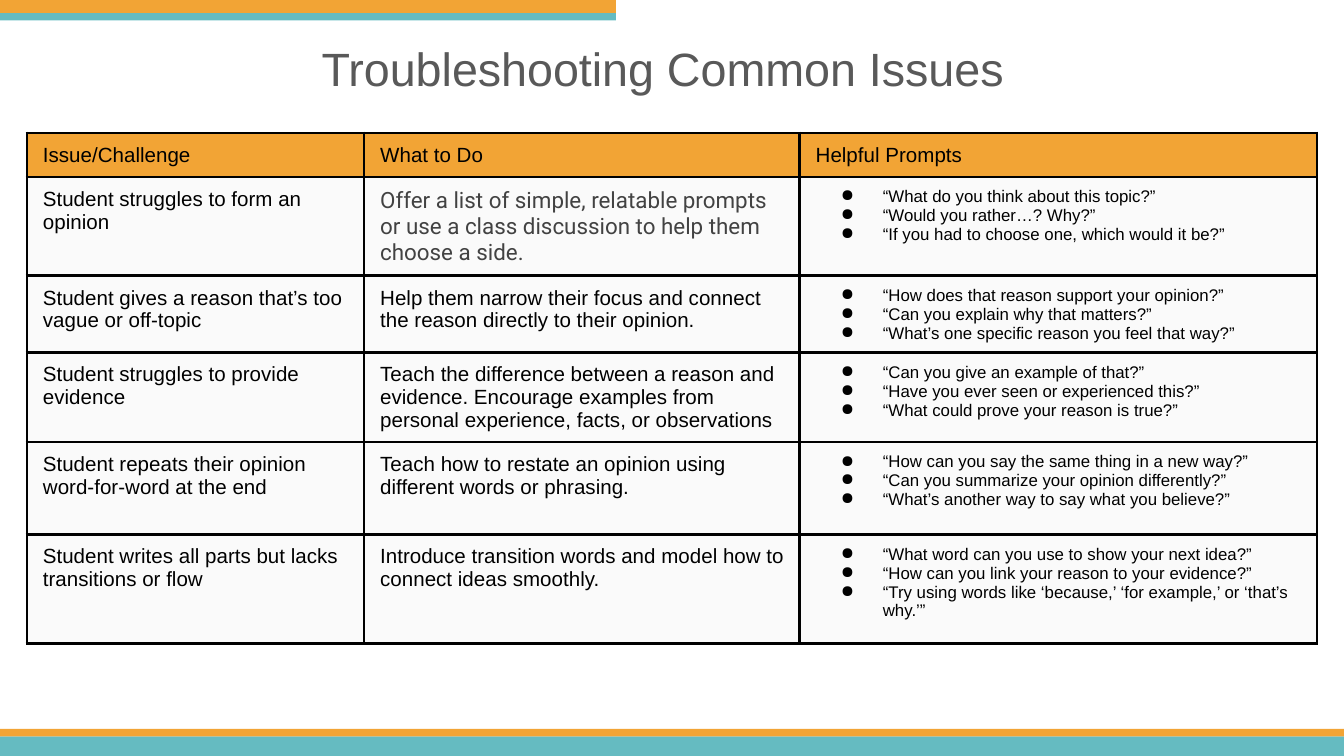
from pptx import Presentation
from pptx.dml.color import RGBColor as RGB
from pptx.enum.shapes import MSO_SHAPE as SHAPE
from pptx.enum.text import MSO_ANCHOR as ANCHOR, MSO_AUTO_SIZE as AUTO, PP_ALIGN as ALIGN
from pptx.oxml.ns import qn
from pptx.util import Pt
from lxml.etree import SubElement

COLORS = {
    "orange": "F2A435",
    "teal": "65BBC1",
    "cell": "FAFAFA",
    "black": "000000",
    "title": "595959",
    "soft": "424242",
}

FONTS = {
    "title": {"name": "Arial", "size": Pt(25), "bold": False},
    "body": {"name": "Arial", "size": Pt(11), "bold": False},
    "roboto": {"name": "Roboto", "size": Pt(12), "bold": False},
    "prompt": {"name": "Arial", "size": Pt(9), "bold": False},
}

STRIPES = [
    ("teal", 0, 394.5, 720, 10.5),
    ("orange", 0, 0, 330, 7),
    ("teal", 0, 7, 330, 4),
    ("orange", 0, 390.5, 720, 4),
]

COL_WIDTHS = [180.7, 233.3, 277.2]
ROW_HEIGHTS = [23.5, 53, 41, 48, 49.5, 58.5]
MARGINS = {"margin_left": Pt(8.6), "margin_top": Pt(5.8),
           "margin_right": Pt(5.8), "margin_bottom": Pt(5)}

HEADERS = ["Issue/Challenge", "What to Do", "Helpful Prompts"]
ISSUES = [
    ("Student struggles to form an opinion",
     "Offer a list of simple, relatable prompts or use a class discussion to help them choose a side.",
     ["“What do you think about this topic?”",
      "“Would you rather…? Why?”",
      "“If you had to choose one, which would it be?”"]),
    ("Student gives a reason that’s too vague or off-topic",
     "Help them narrow their focus and connect the reason directly to their opinion.",
     ["“How does that reason support your opinion?”",
      "“Can you explain why that matters?”",
      "“What’s one specific reason you feel that way?”"]),
    ("Student struggles to provide evidence",
     "Teach the difference between a reason and evidence. Encourage examples from "
     "personal experience, facts, or observations",
     ["“Can you give an example of that?”",
      "“Have you ever seen or experienced this?”",
      "“What could prove your reason is true?”"]),
    ("Student repeats their opinion word-for-word at the end",
     "Teach how to restate an opinion using different words or phrasing.",
     ["“How can you say the same thing in a new way?”",
      "“Can you summarize your opinion differently?”",
      "“What’s another way to say what you believe?”"]),
    ("Student writes all parts but lacks transitions or flow",
     "Introduce transition words and model how to connect ideas smoothly.",
     ["“What word can you use to show your next idea?”",
      "“How can you link your reason to your evidence?”",
      "“Try using words like ‘because,’ ‘for example,’ or ‘that’s why.’”"]),
]


def set_all(obj, values):
    for name, value in values.items():
        setattr(obj, name, value)


def write(p, text, font, color):
    r = p.add_run()
    r.text = text
    set_all(r.font, FONTS[font])
    r.font.color.rgb = RGB.from_string(COLORS[color])


def add_stripe(slide, color, *box):
    sp = slide.shapes.add_shape(SHAPE.RECTANGLE, *map(Pt, box))
    sp.shadow.inherit = False
    sp.fill.solid()
    sp.fill.fore_color.rgb = RGB.from_string(COLORS[color])
    sp.line.fill.background()


def set_title(slide, text):
    sp = slide.shapes.title
    set_all(sp, {"left": Pt(25), "top": Pt(13.5), "width": Pt(660), "height": Pt(45)})
    tf = sp.text_frame
    set_all(tf, {"word_wrap": True, "auto_size": AUTO.NONE, "vertical_anchor": ANCHOR.BOTTOM,
                 "margin_left": Pt(7.2), "margin_top": Pt(7.2),
                 "margin_right": Pt(7.2), "margin_bottom": Pt(7.2)})
    p = tf.paragraphs[0]
    p.alignment = ALIGN.CENTER
    write(p, text, "title", "title")


def add_bullet(p):
    pPr = p._p.get_or_add_pPr()
    pPr.set("marL", str(Pt(36)))
    pPr.set("indent", str(-Pt(22.5)))
    color = SubElement(pPr, qn("a:buClr"))
    SubElement(color, qn("a:srgbClr"), val=COLORS["black"])
    SubElement(pPr, qn("a:buChar"), char="●")


def add_borders(cell):
    tcPr = cell._tc.get_or_add_tcPr()
    for side in ("L", "R", "T", "B"):
        ln = SubElement(tcPr, qn(f"a:ln{side}"), w=str(Pt(1.5)))
        fill = SubElement(ln, qn("a:solidFill"))
        SubElement(fill, qn("a:srgbClr"), val=COLORS["black"])


def fill_cell(cell, content, fill, font="body", color="black"):
    """Write a string as plain text, or a list as bullets."""
    set_all(cell, MARGINS)
    add_borders(cell)
    cell.fill.solid()
    cell.fill.fore_color.rgb = RGB.from_string(COLORS[fill])
    tf = cell.text_frame
    bulleted = isinstance(content, list)
    for i, text in enumerate(content if bulleted else [content]):
        p = tf.add_paragraph() if i else tf.paragraphs[0]
        if bulleted:
            add_bullet(p)
        write(p, text, font, color)


def add_issue_table(slide):
    size = Pt(sum(COL_WIDTHS)), Pt(sum(ROW_HEIGHTS))
    table = slide.shapes.add_table(len(ROW_HEIGHTS), len(COL_WIDTHS),
                                   Pt(14.4), Pt(71.2), *size).table
    set_all(table, {"first_row": False, "horz_banding": False})
    for col, width in zip(table.columns, COL_WIDTHS):
        col.width = Pt(width)
    for row, height in zip(table.rows, ROW_HEIGHTS):
        row.height = Pt(height)
    for c, header in enumerate(HEADERS):
        fill_cell(table.cell(0, c), header, "orange")
    for r, (issue, action, prompts) in enumerate(ISSUES, 1):
        style = ("roboto", "soft") if r == 1 else ("body", "black")
        fill_cell(table.cell(r, 0), issue, "cell")
        fill_cell(table.cell(r, 1), action, "cell", *style)
        fill_cell(table.cell(r, 2), prompts, "cell", "prompt")


def main():
    prs = Presentation()
    set_all(prs, {"slide_width": Pt(720), "slide_height": Pt(405)})
    slide = prs.slides.add_slide(prs.slide_layouts[5])
    for stripe in STRIPES:
        add_stripe(slide, *stripe)
    set_title(slide, "Troubleshooting Common Issues")
    add_issue_table(slide)
    prs.save("out.pptx")


if __name__ == "__main__":
    main()
